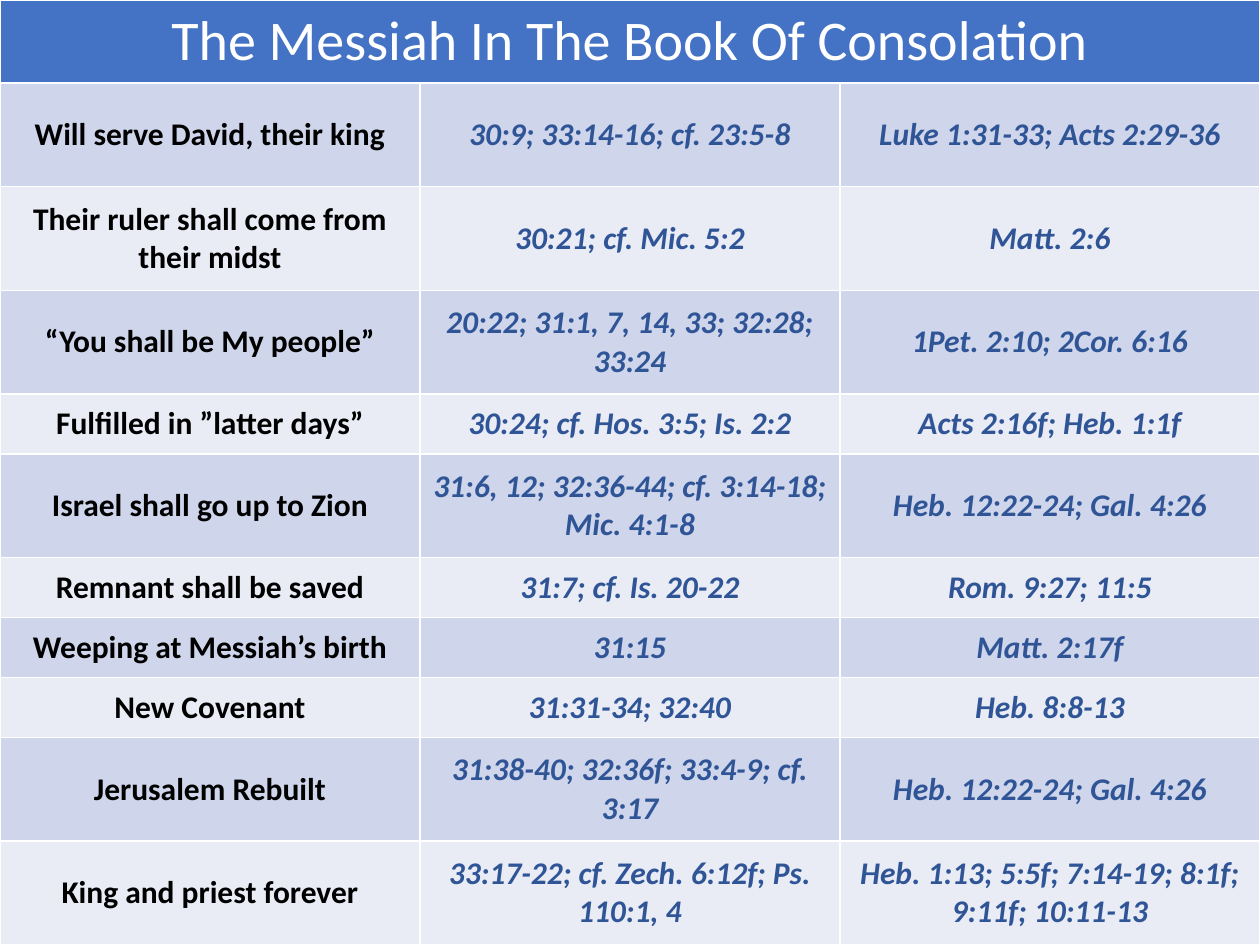
from pptx import Presentation
from pptx.dml.color import RGBColor
from pptx.enum import text
from pptx.util import Pt

COLORS = {
    "header": "4472C4",
    "odd band": "CFD5EA",
    "even band": "E9EBF5",
    "title": "FFFFFF",
    "theme": "000000",
    "verses": "2F5597",
}
HEADER, TALL, SHORT = 47.5, 59.2, 34.3

# Row height, theme, two columns of verses
themes = [
    (TALL, "Will serve David, their king", "30:9; 33:14-16; cf. 23:5-8", "Luke 1:31-33; Acts 2:29-36"),
    (TALL, "Their ruler shall come from their midst", "30:21; cf. Mic. 5:2", "Matt. 2:6"),
    (TALL, "“You shall be My people”", "20:22; 31:1, 7, 14, 33; 32:28; 33:24", "1Pet. 2:10; 2Cor. 6:16"),
    (SHORT, "Fulfilled in ”latter days”", "30:24; cf. Hos. 3:5; Is. 2:2", "Acts 2:16f; Heb. 1:1f"),
    (TALL, "Israel shall go up to Zion", "31:6, 12; 32:36-44; cf. 3:14-18; Mic. 4:1-8", "Heb. 12:22-24; Gal. 4:26"),
    (SHORT, "Remnant shall be saved", "31:7; cf. Is. 20-22", "Rom. 9:27; 11:5"),
    (SHORT, "Weeping at Messiah’s birth", "31:15", "Matt. 2:17f"),
    (SHORT, "New Covenant", "31:31-34; 32:40", "Heb. 8:8-13"),
    (TALL, "Jerusalem Rebuilt", "31:38-40; 32:36f; 33:4-9; cf. 3:17", "Heb. 12:22-24; Gal. 4:26"),
    (TALL, "King and priest forever", "33:17-22; cf. Zech. 6:12f; Ps. 110:1, 4",
     "Heb. 1:13; 5:5f; 7:14-19; 8:1f; 9:11f; 10:11-13"),
]


def fill_cell(cell, words, fill, color, size, bold, italic):
    cell.fill.solid()
    cell.fill.fore_color.rgb = RGBColor.from_string(COLORS[fill])
    cell.vertical_anchor = text.MSO_ANCHOR.MIDDLE
    cell.text = words
    paragraph = cell.text_frame.paragraphs[0]
    paragraph.alignment = text.PP_ALIGN.CENTER
    # Table styles outrank paragraph fonts, so the run carries the format
    font = paragraph.runs[0].font
    font.name = "Calibri"
    font.size = Pt(size)
    font.bold = bold
    font.italic = italic
    font.color.rgb = RGBColor.from_string(COLORS[color])


prs = Presentation()
prs.slide_width, prs.slide_height = Pt(720), Pt(540)
slide = prs.slides.add_slide(prs.slide_layouts[6])

# Table over the whole slide; its default style draws the white rules
table = slide.shapes.add_table(len(themes) + 1, 3, 0, 0, Pt(720), Pt(540)).table
for column in table.columns:
    column.width = Pt(240)

# Heading across all columns
table.rows[0].height = Pt(HEADER)
table.cell(0, 0).merge(table.cell(0, 2))
fill_cell(table.cell(0, 0), "The Messiah In The Book Of Consolation",
          "header", "title", 32, False, False)

# Banded rows of themes and verses
for r, (height, *entries) in enumerate(themes, start=1):
    table.rows[r].height = Pt(height)
    band = "odd band" if r % 2 else "even band"
    for c, words in enumerate(entries):
        fill_cell(table.cell(r, c), words, band,
                  "verses" if c else "theme", 18, True, c > 0)

prs.save("out.pptx")
